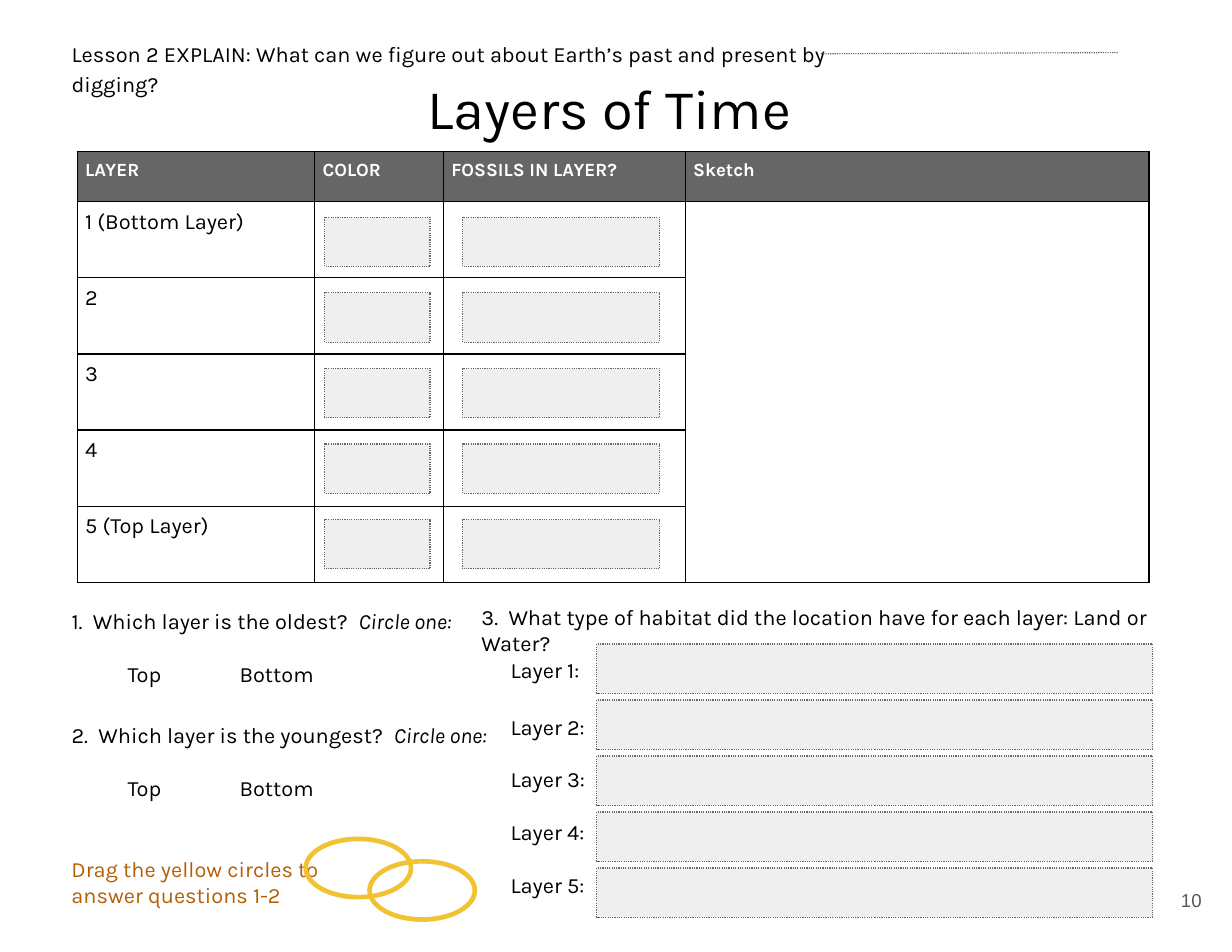
from lxml.etree import SubElement
from pptx import Presentation
from pptx.dml.color import RGBColor
from pptx.enum.dml import MSO_LINE
from pptx.enum.shapes import MSO_CONNECTOR, MSO_SHAPE
from pptx.enum.text import MSO_ANCHOR, PP_ALIGN
from pptx.oxml import parse_xml
from pptx.oxml.ns import nsdecls, qn
from pptx.util import Inches, Pt

BLACK = RGBColor(0x00, 0x00, 0x00)
WHITE = RGBColor(0xFF, 0xFF, 0xFF)
GRAY = RGBColor(0x66, 0x66, 0x66)
DARK_GRAY = RGBColor(0x59, 0x59, 0x59)
PALE_GRAY = RGBColor(0xEF, 0xEF, 0xEF)
YELLOW = RGBColor(0xF1, 0xC2, 0x32)
ORANGE = RGBColor(0xB4, 0x5F, 0x06)
FONT = "Karla"
LEFT = 0.54

prs = Presentation()
prs.slide_width, prs.slide_height = Inches(11), Inches(8.5)
slide = prs.slides.add_slide(prs.slide_layouts[6])


def add_text(place, lines, size=14, color=BLACK, font=FONT, inset=0.1, spacing=1.0):
    """Add a wrapped text box at (left, top, width, height) and return its frame."""
    frame = slide.shapes.add_textbox(*map(Inches, place)).text_frame
    frame.word_wrap = True
    frame.margin_left = frame.margin_right = Inches(inset)
    frame.margin_top = frame.margin_bottom = Inches(inset)
    frame.text = "\n".join(lines)
    for paragraph in frame.paragraphs:
        paragraph.line_spacing = spacing
        for run in paragraph.runs:
            run.font.name, run.font.size = font, Pt(size)
            run.font.color.rgb = color
    return frame


def add_outlined(kind, place, line_color, line_width):
    shape = slide.shapes.add_shape(kind, *map(Inches, place))
    shape.shadow.inherit = False
    shape.fill.background()
    shape.line.color.rgb = line_color
    shape.line.width = Pt(line_width)
    return shape


# Layer table
columns = [2.12, 1.15, 2.16, 4.14]
rows = [0.45] + [0.68] * 5
headings = ["LAYER", "COLOR", "FOSSILS IN LAYER?", "Sketch"]
layers = ["1 (Bottom Layer)", "2", "3", "4", "5 (Top Layer)"]
table = slide.shapes.add_table(
    len(rows), len(columns), Inches(0.69), Inches(1.35),
    Inches(sum(columns)), Inches(sum(rows))).table
for column, width in zip(table.columns, columns):
    column.width = Inches(width)
for row, height in zip(table.rows, rows):
    row.height = Inches(height)
for column, heading in enumerate(headings):
    table.cell(0, column).text = heading
for row, layer in enumerate(layers, start=1):
    table.cell(row, 0).text = layer
table.cell(1, 3).merge(table.cell(5, 3))

for row in range(len(rows)):
    for column in range(len(columns)):
        cell = table.cell(row, column)
        cell.margin_left = cell.margin_right = Inches(0.07)
        cell.margin_top = cell.margin_bottom = Inches(0.07)
        properties = cell._tc.get_or_add_tcPr()
        for side in ("lnL", "lnR", "lnT", "lnB"):
            border = SubElement(properties, qn(f"a:{side}"), w=str(Pt(1)))
            fill = SubElement(border, qn("a:solidFill"))
            SubElement(fill, qn("a:srgbClr"), val=str(BLACK))
        if row == 0:
            cell.fill.solid()
            cell.fill.fore_color.rgb = GRAY
        else:
            cell.fill.background()
        font = cell.text_frame.paragraphs[0].font
        font.name, font.size = FONT, Pt(12 if row == 0 else 14)
        font.bold = row == 0
        font.color.rgb = WHITE if row == 0 else BLACK

# Questions 1 and 2
questions = add_text(
    (LEFT, 5.29, 3.92, 2.15),
    ["1.  Which layer is the oldest?  ", "Top\t\tBottom",
     "2.  Which layer is the youngest?  ", "Top\t\tBottom"], spacing=1.15)
for number, paragraph in enumerate(questions.paragraphs):
    if number % 2:
        paragraph.space_before = Pt(15)
        paragraph._p.get_or_add_pPr().set("marL", str(Inches(0.5)))
    else:
        hint = paragraph.add_run()
        hint.text = "Circle one:"
        hint.font.name, hint.font.size = FONT, Pt(14)
        hint.font.italic = True
        hint.font.color.rgb = BLACK
questions.paragraphs[2].space_before = Pt(19.5)

# Headline, title and name line
add_text((LEFT, 0.23, 7.09, 0.56),
         ["Lesson 2 EXPLAIN: What can we figure out about Earth’s past and present by digging?"],
         spacing=1.15)
title = add_text((0, 0.47, 11, 0.88), ["Layers of Time "], size=36, spacing=1.15)
title.paragraphs[0].alignment = PP_ALIGN.CENTER
name_line = slide.shapes.add_connector(
    MSO_CONNECTOR.STRAIGHT, Inches(7.33), Inches(0.48), Inches(9.98), Inches(0.47))
name_line.line.color.rgb = DARK_GRAY
name_line.line.width = Pt(0.75)
name_line.line.dash_style = MSO_LINE.ROUND_DOT
name_line._element.spPr.append(parse_xml(f"<a:effectLst {nsdecls('a')}/>"))

# Question 3
habitat_labels = add_text((4.46, 5.76, 1.19, 2.37),
                          [f"Layer {number}:" for number in range(1, 6)])
for paragraph, gap in zip(habitat_labels.paragraphs[1:], (20, 17, 17, 17)):
    paragraph.space_before = Pt(gap)
add_text((4.2, 5.29, 6.38, 0.44),
         ["3.  What type of habitat did the location have for each layer: Land or Water?"])

# Yellow circles
add_text((LEFT, 7.54, 2.64, 0.67),
         ["Drag the yellow circles to answer questions 1-2"], color=ORANGE)
for left, top in ((3.3, 7.69), (2.73, 7.49)):
    add_outlined(MSO_SHAPE.OVAL, (left, top, 0.94, 0.52), YELLOW, 3)

# Answer fields: color, fossils, habitat
for left, top, width, pitch in ((2.9, 1.94, 0.94, 0.675),
                                (4.13, 1.94, 1.76, 0.675),
                                (5.33, 5.75, 4.96, 0.5)):
    for number in range(len(layers)):
        field = add_outlined(MSO_SHAPE.RECTANGLE,
                             (left, top + number * pitch, width, 0.44), GRAY, 0.75)
        field.fill.solid()
        field.fill.fore_color.rgb = PALE_GRAY
        field.line.dash_style = MSO_LINE.ROUND_DOT

page_number = add_text((10.19, 7.71, 0.66, 0.65), ["10"], size=12,
                       color=DARK_GRAY, font="Arial", inset=0.12)
page_number.vertical_anchor = MSO_ANCHOR.MIDDLE
page_number.paragraphs[0].alignment = PP_ALIGN.RIGHT

prs.save("out.pptx")
